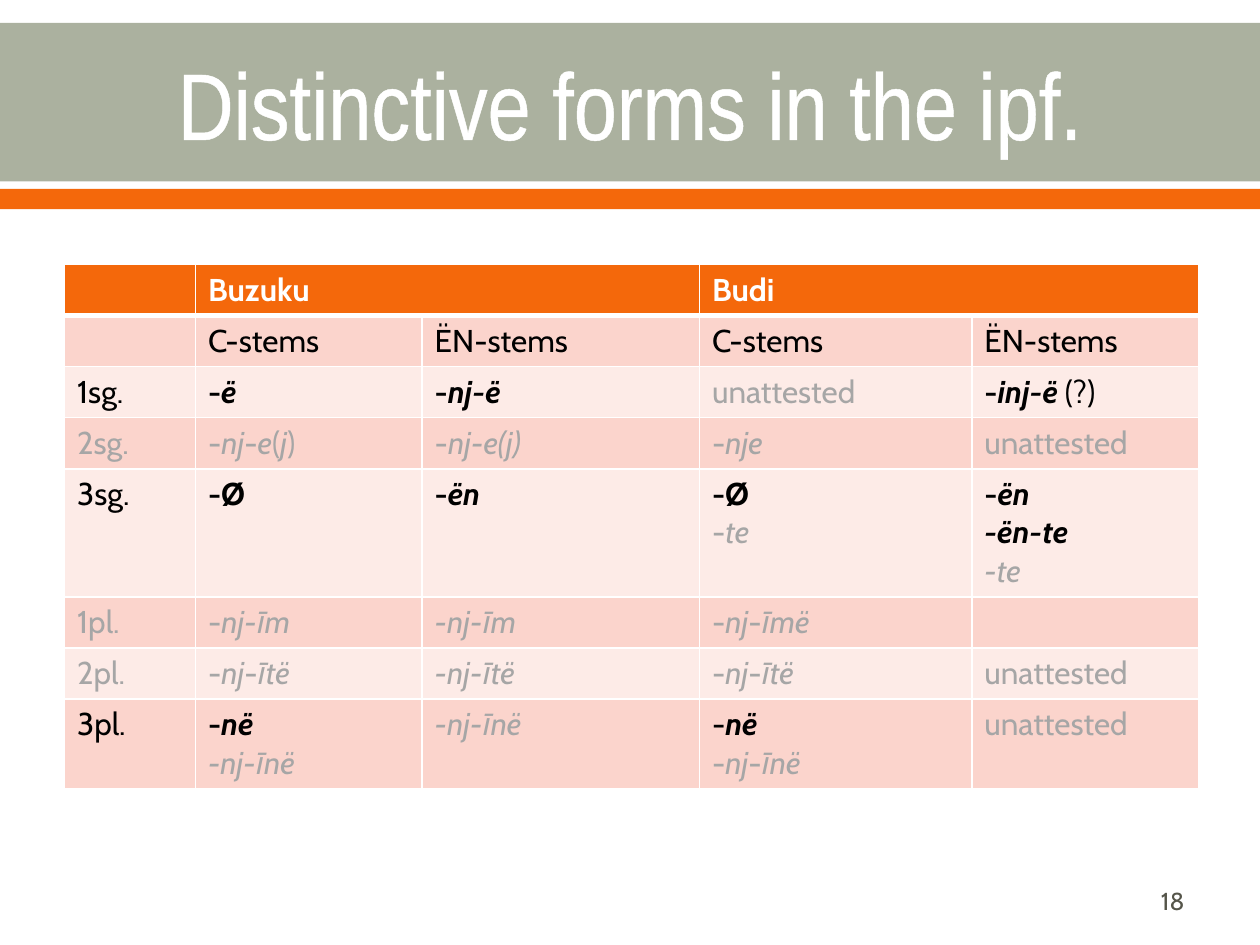
from typing import NamedTuple

from lxml.etree import SubElement
from pptx import Presentation
from pptx.dml.color import RGBColor
from pptx.enum.shapes import MSO_SHAPE
from pptx.enum.text import MSO_ANCHOR, PP_ALIGN
from pptx.oxml.ns import qn
from pptx.util import Cm, Pt

WHITE = RGBColor(0xFF, 0xFF, 0xFF)
BLACK = RGBColor(0x00, 0x00, 0x00)
FAINT = RGBColor(0xA6, 0xA6, 0xA6)
SAGE = RGBColor(0xAB, 0xB1, 0x9F)
ORANGE = RGBColor(0xF4, 0x68, 0x0B)
PINK = RGBColor(0xFB, 0xD4, 0xCC)
PALE = RGBColor(0xFD, 0xEB, 0xE7)
OLIVE = RGBColor(0x55, 0x55, 0x4A)

BODY_FONT = "Cabin"
TITLE_FONT = "Arial Narrow"


class Band(NamedTuple):
    top: float
    height: float
    color: RGBColor


class Row(NamedTuple):
    cells: list[str]
    height: float = 1.03


BANDS = [Band(0.46, 3.2, SAGE), Band(3.81, 0.41, ORANGE)]
COLUMN_WIDTHS = [2.64, 4.57, 5.59, 5.49, 4.57]

# Markup: * switches bold, _ switches italic, a leading ~ makes a line faint.
ROWS = [
    Row(["", "*Buzuku", "", "*Budi", ""]),
    Row(["", "C-stems", "ËN-stems", "C-stems", "ËN-stems"]),
    Row(["1sg.", "*-_ë", "*-_nj-ë", "~unattested", "*-_inj-ë _*(?)"]),
    Row(["~2sg.", "~-_nj_-_e_(_j_)", "~-_nj-e(j)", "~-_nje", "~unattested"]),
    Row(["3sg.", "*-Ø", "*-_ën", "*-Ø\n~-_te", "*-_ën\n*_-ën-te\n~_-te"], 2.58),
    Row(["~1pl.", "~-_nj-īm", "~_-nj-īm", "~-_nj_-_īmë", ""]),
    Row(["~2pl.", "~-_nj_-_ītë", "~_-nj-ītë", "~-_nj_-_ītë", "~unattested"]),
    Row(["3pl.", "*-_në\n~_-nj-īnë", "~_-nj-īnë", "-*_në\n~-_nj_-_īnë",
         "~unattested"], 1.78),
]


def add_span(para, text: str, *, size: float, color: RGBColor,
             font: str = BODY_FONT, bold: bool = False, italic: bool = False):
    span = para.add_run()
    span.text = text
    span.font.name = font
    span.font.size = Pt(size)
    span.font.color.rgb = color
    span.font.bold = bold
    span.font.italic = italic
    return span


def add_marked_line(para, line: str, color: RGBColor) -> None:
    """Turn one line of markup into spans."""
    if line.startswith("~"):
        color = FAINT
    bold = italic = False
    for bold_part in line.lstrip("~").split("*"):
        for part in bold_part.split("_"):
            if part:
                add_span(para, part, size=18, color=color, bold=bold, italic=italic)
            italic = not italic
        italic = not italic  # the last part is not followed by a switch
        bold = not bold


def add_line(parent, tag: str, points: float, color: RGBColor) -> None:
    line = SubElement(parent, qn(tag), w=str(Pt(points)))
    fill = SubElement(line, qn("a:solidFill"))
    SubElement(fill, qn("a:srgbClr"), val=str(color))


def set_borders(cell, top: float, bottom: float) -> None:
    properties = cell._tc.get_or_add_tcPr()
    for side, points in (("L", 1), ("R", 1), ("T", top), ("B", bottom)):
        add_line(properties, f"a:ln{side}", points, WHITE)


def add_band(page, band: Band) -> None:
    box = page.shapes.add_shape(MSO_SHAPE.RECTANGLE, 0, Cm(band.top),
                                Cm(25.4), Cm(band.height))
    box.shadow.inherit = False
    box.fill.solid()
    box.fill.fore_color.rgb = band.color
    box.line.fill.background()


def format_title(page, text: str) -> None:
    title = page.shapes.title
    title.left, title.top = Cm(1.27), Cm(0.51)
    title.width, title.height = Cm(22.86), Cm(3.1)
    title.text_frame.vertical_anchor = MSO_ANCHOR.MIDDLE
    para = title.text_frame.paragraphs[0]
    para.alignment = PP_ALIGN.CENTER
    span = add_span(para, text, size=54, color=WHITE, font=TITLE_FONT)
    properties = span.font._element
    add_line(properties, "a:ln", 1.1, WHITE)
    properties.insert(0, properties[-1])
    title.element.getparent().append(title.element)  # in front of the bands


def add_forms_table(page) -> None:
    table = page.shapes.add_table(
        len(ROWS), len(COLUMN_WIDTHS), Cm(1.3), Cm(5.33),
        Cm(sum(COLUMN_WIDTHS)), Cm(sum(row.height for row in ROWS))).table
    for column, width in zip(table.columns, COLUMN_WIDTHS):
        column.width = Cm(width)
    for row_index, row in enumerate(ROWS):
        table.rows[row_index].height = Cm(row.height)
        is_header = row_index == 0
        fill = ORANGE if is_header else (PALE, PINK)[row_index % 2]
        for column_index, text in enumerate(row.cells):
            cell = table.cell(row_index, column_index)
            set_borders(cell, top=3 if row_index == 1 else 1,
                        bottom=3 if is_header else 1)
            cell.fill.solid()
            cell.fill.fore_color.rgb = fill
            for line_index, line in enumerate(text.split("\n")):
                frame = cell.text_frame
                para = frame.add_paragraph() if line_index else frame.paragraphs[0]
                add_marked_line(para, line, WHITE if is_header else BLACK)
    for first in (1, 3):
        table.cell(0, first).merge(table.cell(0, first + 1))


def add_page_number(page, number: str) -> None:
    box = page.shapes.add_textbox(Cm(18.21), Cm(17.65), Cm(5.92), Cm(1.02))
    box.text_frame.word_wrap = True
    box.text_frame.vertical_anchor = MSO_ANCHOR.MIDDLE
    para = box.text_frame.paragraphs[0]
    para.alignment = PP_ALIGN.RIGHT
    add_span(para, number, size=14, color=OLIVE)


def main() -> None:
    deck = Presentation()
    deck.slide_width, deck.slide_height = Cm(25.4), Cm(19.05)
    page = deck.slides.add_slide(deck.slide_layouts[5])
    for band in BANDS:
        add_band(page, band)
    format_title(page, "Distinctive forms in the ipf.")
    add_forms_table(page)
    add_page_number(page, "18")
    deck.save("out.pptx")


if __name__ == "__main__":
    main()
